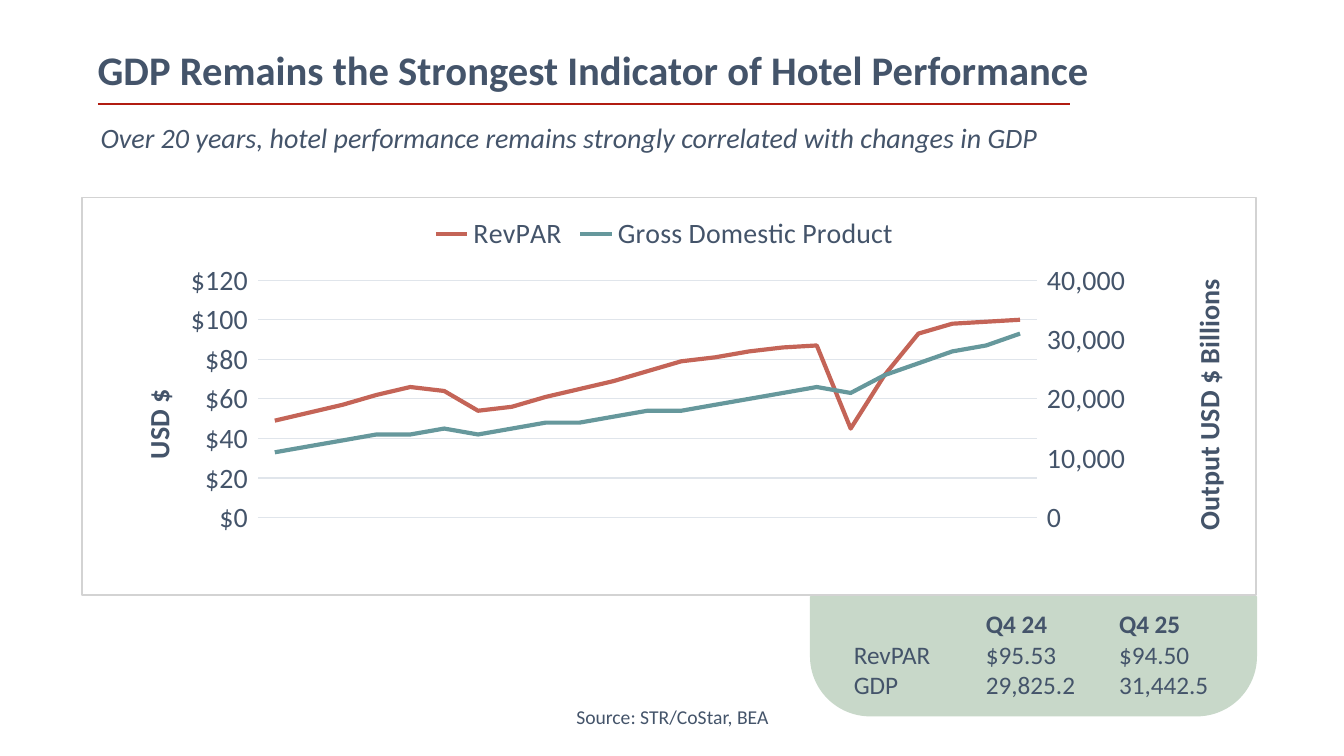
from copy import deepcopy
from dataclasses import dataclass

from lxml import etree
from pptx import Presentation
from pptx.chart.axis import ValueAxis
from pptx.chart.chart import Chart
from pptx.chart.data import CategoryChartData
from pptx.dml.color import RGBColor
from pptx.enum.chart import (XL_CHART_TYPE, XL_LEGEND_POSITION, XL_TICK_LABEL_POSITION,
                             XL_TICK_MARK)
from pptx.enum.shapes import MSO_CONNECTOR, MSO_SHAPE
from pptx.enum.text import MSO_ANCHOR, PP_ALIGN
from pptx.oxml.ns import qn
from pptx.shapes.autoshape import Shape
from pptx.text.text import Font
from pptx.util import Inches, Pt

LINE_CHART = XL_CHART_TYPE.LINE
LEGEND_TOP = XL_LEGEND_POSITION.TOP
NO_TICK = XL_TICK_MARK.NONE
LABELS_LOW, LABELS_HIGH = XL_TICK_LABEL_POSITION.LOW, XL_TICK_LABEL_POSITION.HIGH
STRAIGHT = MSO_CONNECTOR.STRAIGHT
RECTANGLE = MSO_SHAPE.RECTANGLE
ROUNDED_BOTTOM = MSO_SHAPE.ROUND_2_SAME_RECTANGLE
LEFT, CENTER = PP_ALIGN.LEFT, PP_ALIGN.CENTER
TOP, MIDDLE = MSO_ANCHOR.TOP, MSO_ANCHOR.MIDDLE

FONT = "Calibri"
COLORS = {"text": "44546A", "rule": "B11C11", "frame": "D3D3D3", "panel": "C8D8C9",
          "grid": "E0E5EB", "revpar": "C46457", "gdp": "66989C"}
UPWARD = "-5400000"
YEARS = [str(year) for year in range(2003, 2026)]
TABLE_STOPS = (1.31, 2.63)


@dataclass
class TextItem:
    lines: list[str]
    at: tuple[float, float, float, float]
    size: float
    bold_lines: int = 0
    italic: bool = False
    align: PP_ALIGN = LEFT
    anchor: MSO_ANCHOR = TOP
    spacing: float = 1.0
    inset: float = 0.05
    indent: float = 0
    stops: tuple[float, ...] = ()


@dataclass
class Series:
    name: str
    color: str
    values: list[int]


@dataclass
class ValueScale:
    title: str
    title_at: tuple[float, float]
    number_format: str
    maximum: int
    step: int
    label_position: XL_TICK_LABEL_POSITION


TEXTS = [
    TextItem(["GDP Remains the Strongest Indicator of Hotel Performance"],
             (0.81, 0.22, 10.8, 0.76), 29, bold_lines=1, spacing=1.25, inset=0.1,
             indent=0.06),
    TextItem(["Over 20 years, hotel performance remains strongly correlated with "
              "changes in GDP"],
             (0.9, 1.06, 11.2, 0.65), 20, italic=True, anchor=MIDDLE, spacing=0.9),
    TextItem(["Source: STR/CoStar, BEA"], (4.4, 6.94, 4.54, 0.34), 14, align=CENTER),
    TextItem(["\tQ4 24\tQ4 25", "RevPAR\t$95.53\t$94.50", "GDP\t29,825.2\t31,442.5"],
             (8.37, 5.99, 4.09, 1.01), 18, bold_lines=1, stops=TABLE_STOPS),
]
SERIES = [
    Series("RevPAR", "revpar",
           [49, 53, 57, 62, 66, 64, 54, 56, 61, 65, 69, 74, 79, 81, 84, 86, 87, 45,
            72, 93, 98, 99, 100]),
    Series("Gross Domestic Product", "gdp",
           [11000, 12000, 13000, 14000, 14000, 15000, 14000, 15000, 16000, 16000,
            17000, 18000, 18000, 19000, 20000, 21000, 22000, 21000, 24000, 26000,
            28000, 29000, 31000]),
]
LEFT_SCALE = ValueScale("USD $", (0.03, 0.47), '"$"#,##0', 120, 20, LABELS_LOW)
RIGHT_SCALE = ValueScale("Output USD $ Billions", (0.96, 0.18), "#,##0", 40000, 10000,
                         LABELS_HIGH)


def rgb(name: str) -> RGBColor:
    return RGBColor.from_string(COLORS[name])


def style_font(font: Font, size: float, bold: bool = False, italic: bool = False) -> None:
    font.name, font.size, font.bold, font.italic = FONT, Pt(size), bold, italic
    font.color.rgb = rgb("text")


def add_text(shapes, item: TextItem) -> None:
    frame = shapes.add_textbox(*map(Inches, item.at)).text_frame
    frame.word_wrap = True
    frame.vertical_anchor = item.anchor
    frame.margin_top = frame.margin_bottom = Inches(item.inset)
    frame.text = "\n".join(item.lines)
    for index, para in enumerate(frame.paragraphs):
        para.alignment, para.line_spacing = item.align, item.spacing
        properties = para._p.get_or_add_pPr()
        properties.set("marL", str(Inches(item.indent)))
        if item.stops:
            tab_list = etree.SubElement(properties, qn("a:tabLst"))
            for stop in item.stops:
                etree.SubElement(tab_list, qn("a:tab"), pos=str(Inches(stop)), algn="l")
        for span in para.runs:
            style_font(span.font, item.size, index < item.bold_lines, item.italic)


def add_panel(shapes, kind: MSO_SHAPE, at: tuple, line: str, width: float) -> Shape:
    panel = shapes.add_shape(kind, *map(Inches, at))
    panel.shadow.inherit = False
    panel.fill.background()
    panel.line.color.rgb = rgb(line)
    panel.line.width = Pt(width)
    return panel


def add_rule(shapes) -> None:
    rule = shapes.add_connector(STRAIGHT, Inches(0.97), Inches(1.03),
                                Inches(10.61), Inches(1.03))
    rule.line.color.rgb = rgb("rule")
    rule.line.width = Pt(1)
    etree.SubElement(rule._element.spPr, qn("a:effectLst"))


def fill_layout(layout, **settings: str | float) -> None:
    """Place a chart part by fractions of the chart area."""
    manual = etree.SubElement(layout, qn("c:manualLayout"))
    for tag, value in settings.items():
        etree.SubElement(manual, qn(f"c:{tag}"), val=str(value))


def split_axes(chart: Chart) -> tuple[ValueAxis, ValueAxis]:
    """Move the second series to its own axes and return both value axes."""
    category, value = chart.category_axis._element, chart.value_axis._element
    if value.find(qn("c:crossBetween")) is None:
        between = etree.Element(qn("c:crossBetween"), val="between")
        value.find(qn("c:crosses")).addnext(between)
    lines = chart.plots[0]._element
    right_lines, right_category, right_value = map(deepcopy, (lines, category, value))
    lines.remove(lines.findall(qn("c:ser"))[1])
    right_lines.remove(right_lines.findall(qn("c:ser"))[0])
    new_ids = dict(zip((item.get("val") for item in lines.findall(qn("c:axId"))),
                       ("5001", "5002")))
    for part in (right_lines, right_category, right_value):
        for tag in ("c:axId", "c:crossAx"):
            for reference in part.findall(qn(tag)):
                reference.set("val", new_ids[reference.get("val")])
    lines.addnext(right_lines)
    value.addnext(right_value)
    right_value.addnext(right_category)
    right_value.find(qn("c:axPos")).set("val", "r")
    right_value.find(qn("c:crosses")).set("val", "max")
    right_category.find(qn("c:delete")).set("val", "1")
    return ValueAxis(value), ValueAxis(right_value)


def style_value_axis(axis: ValueAxis, scale: ValueScale) -> None:
    axis.minimum_scale, axis.maximum_scale = 0, scale.maximum
    axis.major_unit = scale.step
    axis.tick_label_position = scale.label_position
    axis.format.line.fill.background()
    labels = axis.tick_labels
    labels.number_format, labels.number_format_is_linked = scale.number_format, False
    style_font(labels.font, 20)
    title = axis.axis_title
    title.text_frame.text = scale.title
    style_font(title.text_frame.paragraphs[0].runs[0].font, 20, bold=True)
    body = title.text_frame._txBody.bodyPr
    body.set("rot", UPWARD)
    body.set("vert", "horz")
    left, top = scale.title_at
    fill_layout(title._element.find(qn("c:layout")),
                xMode="edge", yMode="edge", x=left, y=top)


def add_performance_chart(shapes) -> None:
    data = CategoryChartData()
    data.categories = YEARS
    for series in SERIES:
        data.add_series(series.name, series.values)
    chart = shapes.add_chart(LINE_CHART, *map(Inches, (0.99, 2.02, 11.26, 3.8)),
                             data).chart
    style_font(chart.font, 20)
    chart.has_title = False
    chart.has_legend = True
    chart.legend.position = LEGEND_TOP
    chart.legend.include_in_layout = False
    style_font(chart.legend.font, 20)

    years = chart.category_axis
    years.visible = True
    years.major_tick_mark = NO_TICK
    years.tick_label_position = LABELS_LOW
    years.format.line.color.rgb = rgb("grid")
    years.format.line.width = Pt(0.75)
    style_font(years.tick_labels.font, 20)
    years._element.find(qn("c:txPr")).find(qn("a:bodyPr")).set("rot", UPWARD)

    left_axis, right_axis = split_axes(chart)
    style_value_axis(left_axis, LEFT_SCALE)
    style_value_axis(right_axis, RIGHT_SCALE)
    right_axis.has_major_gridlines = False
    grid = left_axis.major_gridlines.format.line
    grid.color.rgb = rgb("grid")
    grid.width = Pt(0.75)

    for plot, series in zip(chart.plots, SERIES):
        plot.vary_by_categories = False
        curve = plot.series[0]
        curve.smooth = False
        curve.format.line.color.rgb = rgb(series.color)
        curve.format.line.width = Pt(3)

    plot_area = left_axis._element.getparent()
    layout = plot_area.find(qn("c:layout"))
    if layout is None:
        layout = etree.Element(qn("c:layout"))
        plot_area.insert(0, layout)
    fill_layout(layout, layoutTarget="inner", xMode="edge", yMode="edge",
                x=0.14, y=0.2, w=0.69, h=0.62)


def main() -> None:
    deck = Presentation()
    deck.slide_width, deck.slide_height = Inches(13.33), Inches(7.5)
    shapes = deck.slides.add_slide(deck.slide_layouts[6]).shapes
    add_rule(shapes)
    add_panel(shapes, RECTANGLE, (0.81, 1.96, 11.65, 3.94), "frame", 1.25)
    summary = add_panel(shapes, ROUNDED_BOTTOM, (8.04, 5.92, 4.42, 1.18), "panel", 1)
    summary.adjustments[0], summary.adjustments[1] = 0, 0.5
    summary.fill.solid()
    summary.fill.fore_color.rgb = rgb("panel")
    for item in TEXTS:
        add_text(shapes, item)
    add_performance_chart(shapes)
    deck.save("out.pptx")


if __name__ == "__main__":
    main()
